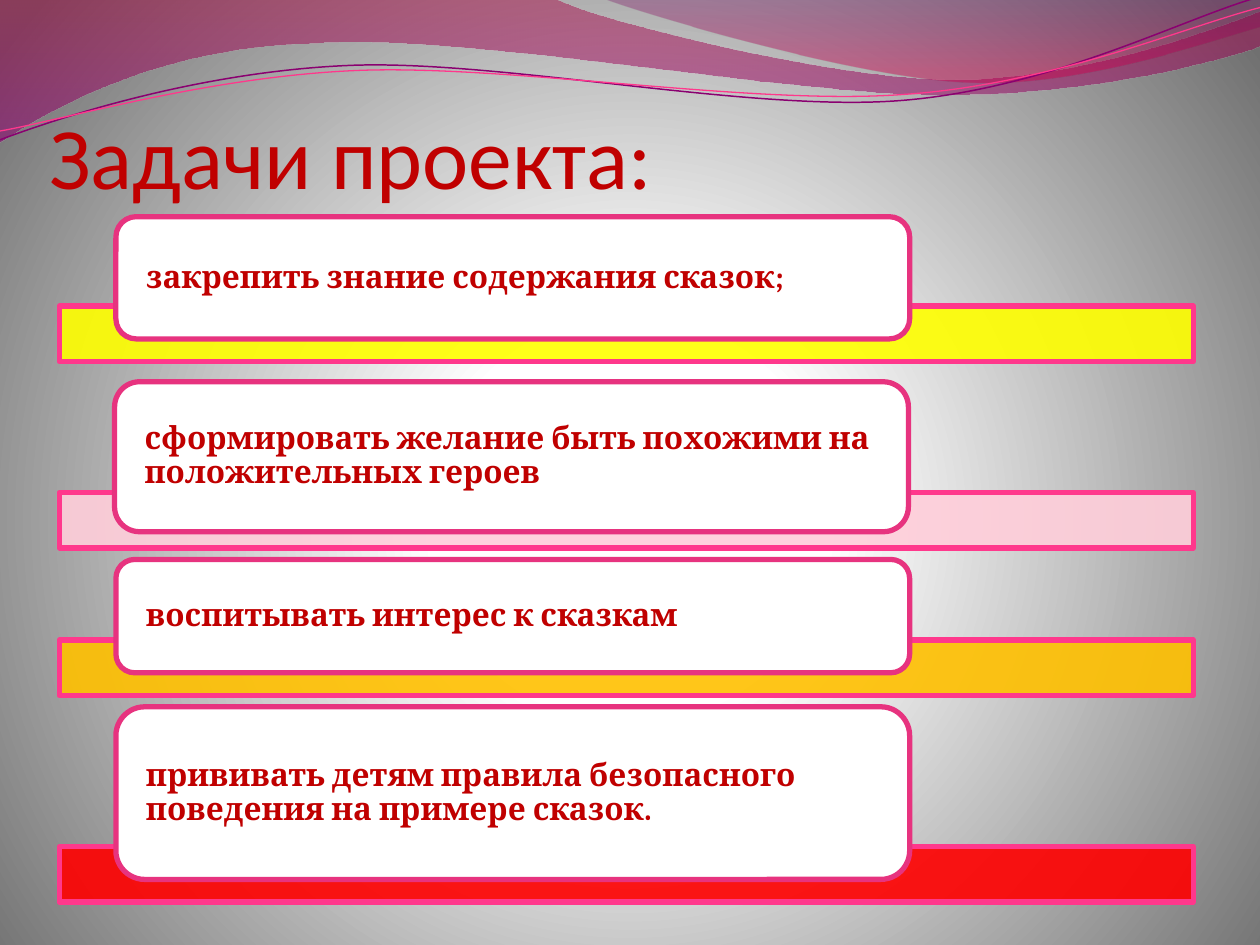
from lxml.etree import SubElement
from pptx import Presentation
from pptx.dml.color import RGBColor
from pptx.enum.shapes import MSO_SHAPE as Shape
from pptx.enum.text import MSO_ANCHOR as Anchor, PP_ALIGN as Align
from pptx.oxml import parse_xml
from pptx.oxml.ns import nsdecls, qn
from pptx.util import Inches, Pt

DARK_RED = RGBColor(0xC0, 0x00, 0x00)
WHITE = RGBColor(0xFF, 0xFF, 0xFF)
PINK = RGBColor(0xFF, 0x38, 0x8C)
ROSE = RGBColor(0xE7, 0x33, 0x7F)
PURPLE = RGBColor(0x8A, 0x00, 0x70)
YELLOW = RGBColor(0xFF, 0xFF, 0x00)
PALE_PINK = RGBColor(0xFF, 0xCE, 0xDA)
AMBER = RGBColor(0xFF, 0xC0, 0x00)
RED = RGBColor(0xFF, 0x00, 0x00)

TITLE = "Задачи проекта:"
# text, card left, card top, card height, bar top, bar colour
TASKS = [
    ("закрепить знание содержания сказок;", 0.92, 1.72, 0.97, 2.43, YELLOW),
    ("сформировать желание быть похожими на положительных героев",
     0.91, 3.03, 1.19, 3.91, PALE_PINK),
    ("воспитывать интерес к сказкам", 0.92, 4.44, 0.9, 5.08, AMBER),
    ("прививать детям правила безопасного поведения на примере сказок.",
     0.92, 5.61, 1.37, 6.72, RED),
]
BAR_LEFT, BAR_WIDTH, BAR_HEIGHT = 0.47, 9, 0.44
CARD_WIDTH, CARD_INSET = 6.3, 0.24

# Outlines: a pair is a straight step, six numbers are a Bezier step
# Gradient stops: position, colour, opacity (percent)
WAVES = [
    ([(0, 0), (4.4, -0.01), (4.76, 0.17, 6.64, 0.63, 7.58, 0.63),
      (8.53, 0.63, 9.58, 0.26, 10, 0.09), (10.01, 0.36),
      (9.83, 0.44, 8.7, 0.76, 7.46, 0.75), (6.22, 0.75, 3.82, 0.28, 2.57, 0.34),
      (1.29, 0.36, 0.46, 0.83, -0.01, 1.13)],
     [(0, "A90042", 45), (100, "8E0073", 55)]),
    ([(4.79, -0.01), (5.09, 0.11, 6.82, 0.62, 7.69, 0.65),
      (8.56, 0.69, 9.61, 0.32, 10, 0.21), (10, 0)],
     [(0, "73005E", 30), (80, "C9004F", 45)]),
]
STRANDS = [
    ([(0, 1.11), (0.48, 0.93, 1.58, 0.57, 2.77, 0.52),
      (3.95, 0.47, 5.93, 0.89, 7.13, 0.8), (8.33, 0.71, 9.38, 0.15, 9.98, -0.02)],
     PURPLE, 0.85),
    ([(0, 1.04), (0.47, 0.96, 1.64, 0.61, 2.83, 0.56),
      (4.03, 0.51, 5.97, 0.84, 7.17, 0.75), (8.36, 0.67, 9.41, 0.21, 10, 0.06)],
     PINK, 0.75),
]
BACKDROP = [(0, "FFFFFF", 100), (25, "FFFFFF", 100), (100, "707070", 100)]
LINEAR = '<a:lin ang="5400000" scaled="0"/>'
CIRCLE = ('<a:path path="circle"><a:fillToRect l="10000" t="110000" '
          'r="10000" b="100000"/></a:path>')


def set_gradient(fill, parent, stops, direction):
    fill.solid()
    fill.fore_color.rgb = WHITE
    stop_xml = "".join(
        f'<a:gs pos="{pos * 1000}"><a:srgbClr val="{colour}">'
        f'<a:alpha val="{opacity * 1000}"/></a:srgbClr></a:gs>'
        for pos, colour, opacity in stops)
    gradient = parse_xml(f'<a:gradFill {nsdecls("a")} rotWithShape="1">'
                         f'<a:gsLst>{stop_xml}</a:gsLst>{direction}</a:gradFill>')
    parent.replace(parent.find(qn("a:solidFill")), gradient)


def add_outline(page, steps, close):
    points = [(Inches(step[i]), Inches(step[i + 1]))
              for step in steps for i in range(0, len(step), 2)]
    builder = page.shapes.build_freeform(*points[0])
    builder.add_line_segments(points[1:], close=close)
    outline = builder.convert_to_shape()
    outline.shadow.inherit = False
    # Each Bezier step takes over the points of three straight segments
    segments = iter(list(outline.element.iter(qn("a:lnTo"))))
    for step in steps[1:]:
        first = next(segments)
        if len(step) == 6:
            curve = parse_xml(f'<a:cubicBezTo {nsdecls("a")}/>')
            first.addprevious(curve)
            for segment in (first, next(segments), next(segments)):
                curve.append(segment[0])
                segment.getparent().remove(segment)
    return outline


def add_panel(page, kind, place, fill, line):
    panel = page.shapes.add_shape(kind, *map(Inches, place))
    panel.shadow.inherit = False
    panel.fill.solid()
    panel.fill.fore_color.rgb = fill
    panel.line.color.rgb = line
    panel.line.width = Pt(3)
    return panel


def write(box, text, *, font, size, bold=False, anchor=Anchor.MIDDLE,
          inset=0, top=0, spacing=1.0):
    frame = box.text_frame
    frame.word_wrap = True
    frame.vertical_anchor = anchor
    frame.margin_left = frame.margin_right = Inches(inset)
    frame.margin_top, frame.margin_bottom = Inches(top), 0
    para = frame.paragraphs[0]
    para.alignment = Align.LEFT
    para.line_spacing = spacing
    span = para.add_run()
    span.text = text
    span.font.name = font
    span.font.size = Pt(size)
    span.font.bold = bold
    span.font.color.rgb = DARK_RED


def main():
    deck = Presentation()
    deck.slide_width, deck.slide_height = Inches(10), Inches(7.5)
    page = deck.slides.add_slide(deck.slide_layouts[6])

    # Backdrop
    fill = page.background.fill
    fill.solid()
    holder = next(page.element.iter(qn("p:bgPr")))
    set_gradient(fill, holder, BACKDROP, CIRCLE)

    # Waves and strands along the top
    for steps, stops in WAVES:
        wave = add_outline(page, steps, close=True)
        set_gradient(wave.fill, wave.element.spPr, stops, LINEAR)
        wave.line.fill.background()
    for steps, colour, width in STRANDS:
        strand = add_outline(page, steps, close=False)
        strand.fill.background()
        strand.line.color.rgb = colour
        strand.line.width = Pt(width)

    # Title
    box = page.shapes.add_textbox(*map(Inches, (0.39, 0.39, 9, 1.25)))
    write(box, TITLE, font="Calibri", size=50, anchor=Anchor.BOTTOM, top=0.05)

    # Tasks: a colour bar with a card over it
    for text, left, top, height, bar_top, colour in TASKS:
        bar = add_panel(page, Shape.RECTANGLE,
                        (BAR_LEFT, bar_top, BAR_WIDTH, BAR_HEIGHT), colour, PINK)
        tint = bar.element.spPr.find(qn("a:solidFill"))[0]
        SubElement(tint, qn("a:alpha")).set("val", "90000")
        card = add_panel(page, Shape.ROUNDED_RECTANGLE,
                         (left, top, CARD_WIDTH, height), WHITE, ROSE)
        # The rounded corners already push the text in by 5 % of the height
        write(card, text, font="Cambria", size=18, bold=True,
              inset=CARD_INSET - 0.05 * height, spacing=0.9)

    deck.save("out.pptx")


if __name__ == "__main__":
    main()
